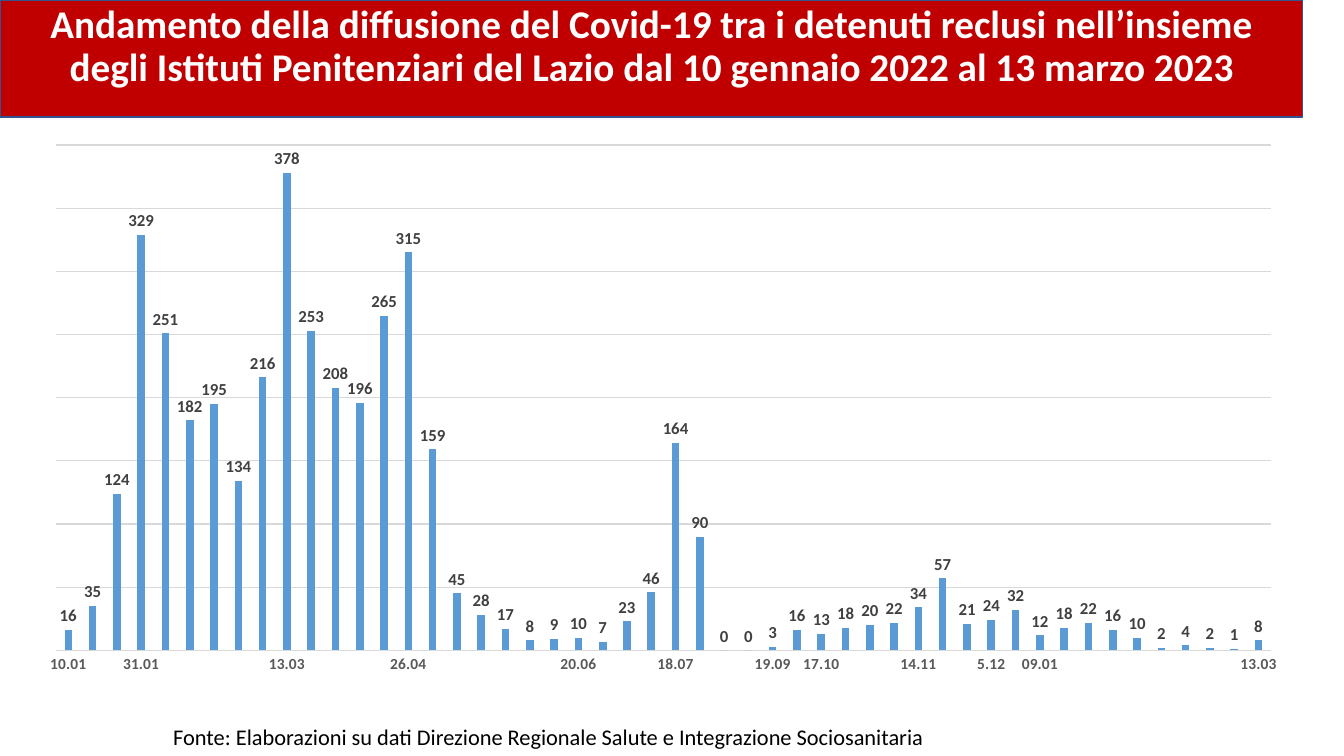
"""Build the slide on Covid-19 among detainees in the prisons of Lazio."""
import pptx
import pptx.chart.data
import pptx.dml.color
import pptx.enum.chart
import pptx.enum.shapes
import pptx.enum.text
import pptx.oxml
import pptx.util
from pptx.util import Inches

TITLE = ("Andamento della diffusione del Covid-19 tra i detenuti reclusi nell’insieme "
         "degli Istituti Penitenziari del Lazio dal 10 gennaio 2022 al 13 marzo 2023")
SOURCE = "Fonte: Elaborazioni su dati Direzione Regionale Salute e Integrazione Sociosanitaria"
CASES = [16, 35, 124, 329, 251, 182, 195, 134, 216, 378, 253, 208, 196, 265, 315, 159, 45,
         28, 17, 8, 9, 10, 7, 23, 46, 164, 90, 0, 0, 3, 16, 13, 18, 20, 22, 34, 57, 21, 24,
         32, 12, 18, 22, 16, 10, 2, 4, 2, 1, 8]
DATES = {0: "10.01", 3: "31.01", 9: "13.03", 14: "26.04", 21: "20.06", 25: "18.07",
         29: "19.09", 31: "17.10", 35: "14.11", 38: "5.12", 40: "09.01", 49: "13.03"}
PLOT_AREA = {"x": 0.025, "y": 0.02, "w": 0.95, "h": 0.92}
CHART = "{http://schemas.openxmlformats.org/drawingml/2006/chart}"
DRAWING = "{http://schemas.openxmlformats.org/drawingml/2006/main}"


def colour(value):
    return pptx.dml.color.RGBColor.from_string(value)


def style_font(font, size, value, bold=False):
    font.name = "Calibri"
    font.size = pptx.util.Pt(size)
    font.bold = bold
    font.color.rgb = colour(value)


def style_line(line, value, width):
    line.color.rgb = colour(value)
    line.width = pptx.util.Pt(width)


def add_banner(page):
    box = page.shapes.add_shape(pptx.enum.shapes.MSO_SHAPE.RECTANGLE,
                                0, 0, Inches(12.92), Inches(1.16))
    box.shadow.inherit = False
    box.fill.solid()
    box.fill.fore_color.rgb = colour("C00000")
    style_line(box.line, "325491", 1)
    frame = box.text_frame
    frame.text = TITLE
    frame.word_wrap = True
    frame.vertical_anchor = pptx.enum.text.MSO_ANCHOR.TOP
    para = frame.paragraphs[0]
    para.alignment = pptx.enum.text.PP_ALIGN.CENTER
    para.line_spacing = 0.9
    para.space_before = pptx.util.Pt(10)
    style_font(para.runs[0].font, 28, "FFFFFF", True)


def add_source(page):
    box = page.shapes.add_textbox(Inches(1.62), Inches(7.13), Inches(7.84), Inches(0.37))
    frame = box.text_frame
    frame.text = SOURCE
    frame.word_wrap = False
    frame.auto_size = pptx.enum.text.MSO_AUTO_SIZE.SHAPE_TO_FIT_TEXT
    style_font(frame.paragraphs[0].runs[0].font, 16, "000000")


def fix_plot_area(chart):
    sizes = "".join(f'<c:{key} val="{value}"/>' for key, value in PLOT_AREA.items())
    layout = pptx.oxml.parse_xml(
        f'<c:layout xmlns:c="{CHART[1:-1]}"><c:manualLayout><c:layoutTarget val="inner"/>'
        f'<c:xMode val="edge"/><c:yMode val="edge"/>{sizes}</c:manualLayout></c:layout>')
    plot_area = chart.element.find(f".//{CHART}plotArea")
    for old in plot_area.findall(f"{CHART}layout"):
        plot_area.remove(old)
    plot_area.insert(0, layout)


def style_axes(chart):
    dates = chart.category_axis
    dates.major_tick_mark = pptx.enum.chart.XL_TICK_MARK.NONE
    dates.has_major_gridlines = False
    style_font(dates.tick_labels.font, 11, "595959", True)
    style_line(dates.format.line, "D9D9D9", 0.75)
    body = chart.element.find(f".//{CHART}catAx/{CHART}txPr/{DRAWING}bodyPr")
    body.set("rot", "-60000000")
    body.set("vert", "horz")
    cases = chart.value_axis
    cases.visible = False
    cases.minimum_scale, cases.maximum_scale, cases.major_unit = 0, 400, 50
    cases.has_major_gridlines = True
    style_line(cases.major_gridlines.format.line, "D9D9D9", 0.75)


def style_columns(plot):
    plot.gap_width = 219
    plot.overlap = -27
    plot.vary_by_categories = False
    columns = plot.series[0]
    columns.format.fill.solid()
    columns.format.fill.fore_color.rgb = colour("5B9BD5")
    labels = columns.data_labels
    labels.show_value = True
    labels.position = pptx.enum.chart.XL_LABEL_POSITION.OUTSIDE_END
    style_font(labels.font, 12, "404040", True)


def add_cases_chart(page):
    data = pptx.chart.data.CategoryChartData()
    data.categories = [DATES.get(index, "") for index in range(len(CASES))]
    data.add_series("Series 1", CASES)
    chart = page.shapes.add_chart(pptx.enum.chart.XL_CHART_TYPE.COLUMN_CLUSTERED, Inches(0.24),
                                  Inches(1.33), Inches(12.68), Inches(5.45), data).chart
    chart.has_legend = False
    chart.has_title = False
    style_font(chart.font, 10, "000000")
    style_axes(chart)
    style_columns(chart.plots[0])
    fix_plot_area(chart)


def main():
    deck = pptx.Presentation()
    deck.slide_width = Inches(13.33)
    deck.slide_height = Inches(7.5)
    page = deck.slides.add_slide(deck.slide_layouts[6])
    add_banner(page)
    add_source(page)
    add_cases_chart(page)
    deck.save("out.pptx")


if __name__ == "__main__":
    main()
